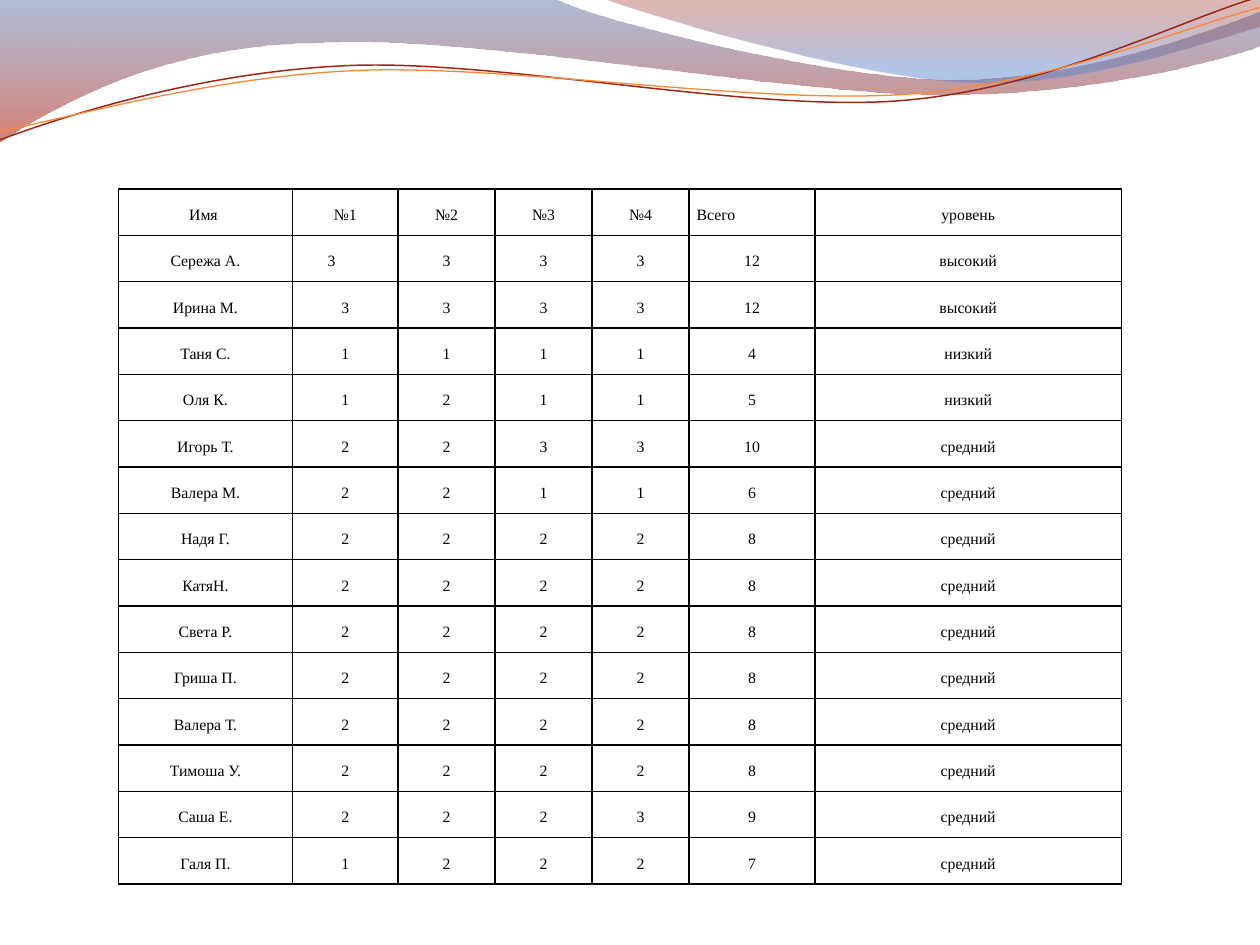
import math
from dataclasses import dataclass

from lxml import etree
from pptx import Presentation
from pptx import util as u
from pptx.dml import color
from pptx.enum import text
from pptx.oxml import ns


@dataclass(frozen=True)
class Theme:
    """Colours, type sizes and line widths of the slide."""
    font: str = "Times New Roman"
    size: float = 9
    ink: str = "000000"
    border: float = 1
    slate: str = "4F6EA8"
    red: str = "B61A00"
    brick: str = "951500"
    sky: str = "5681D1"
    rust: str = "9E2713"
    orange: str = "FE8637"


THEME = Theme()
BLANK_LAYOUT = 6
TILT = 357.3
TABLE_LEFT, TABLE_TOP, TABLE_HEIGHT = 0.94, 1.5, 5.52
COLUMNS = [1.38, 0.84, 0.77, 0.77, 0.77, 1, 2.43]
SIDE_MARGIN = 0.06
SCORE_INDENT = 0.22
HEADERS = ["Имя ", "№1", "№2", "№3", "№4", "Всего", "уровень"]
CHILDREN = [
    ("Сережа А.", (3, 3, 3, 3), "высокий"),
    ("Ирина М.", (3, 3, 3, 3), "высокий"),
    ("Таня С.", (1, 1, 1, 1), "низкий"),
    ("Оля К.", (1, 2, 1, 1), "низкий"),
    ("Игорь Т.", (2, 2, 3, 3), "средний"),
    ("Валера М.", (2, 2, 1, 1), "средний"),
    ("Надя Г.", (2, 2, 2, 2), "средний"),
    ("КатяН.", (2, 2, 2, 2), "средний"),
    ("Света Р.", (2, 2, 2, 2), "средний"),
    ("Гриша П.", (2, 2, 2, 2), "средний"),
    ("Валера Т.", (2, 2, 2, 2), "средний"),
    ("Тимоша У.", (2, 2, 2, 2), "средний"),
    ("Саша Е.", (2, 2, 2, 3), "средний"),
    ("Галя П.", (1, 2, 2, 2), "средний"),
]
LEFT_INDENTS = {(0, 5): 0, (1, 1): SCORE_INDENT}

WIDE_BAND = [
    [(0, -0.01)], [(4.4, -0.01)],
    [(4.76, 0.17), (6.64, 0.63), (7.58, 0.63)],
    [(8.53, 0.63), (9.58, 0.26), (10, 0.09)], [(10.01, 0.36)],
    [(9.83, 0.44), (8.7, 0.76), (7.46, 0.75)],
    [(6.22, 0.75), (3.82, 0.28), (2.57, 0.34)],
    [(1.29, 0.35), (0.46, 0.83), (-0.01, 1.13)],
]
RIGHT_BAND = [
    [(4.79, -0.01)],
    [(5.09, 0.11), (6.82, 0.62), (7.69, 0.65)],
    [(8.56, 0.69), (9.61, 0.32), (10, 0.21)], [(10, 0)],
]
RUST_CURVE = [
    [(0, 1.11)],
    [(0.48, 0.93), (1.58, 0.57), (2.77, 0.52)],
    [(3.95, 0.47), (5.93, 0.89), (7.13, 0.8)],
    [(8.33, 0.71), (9.38, 0.15), (9.98, -0.02)],
]
ORANGE_CURVE = [
    [(0, 1.04)],
    [(0.47, 0.96), (1.64, 0.61), (2.83, 0.56)],
    [(4.03, 0.51), (5.97, 0.83), (7.17, 0.75)],
    [(8.36, 0.67), (9.41, 0.21), (10, 0.06)],
]


def rgb(value):
    """Return the colour object for a hex value."""
    return color.RGBColor.from_string(value)


def level_out(outline, centre):
    """Turn an outline about its centre so that the tilt brings it back."""
    angle = math.radians(-TILT)
    cos, sin = math.cos(angle), math.sin(angle)
    cx, cy = centre
    return [[(cx + (x - cx) * cos - (y - cy) * sin, cy + (x - cx) * sin + (y - cy) * cos)
             for x, y in segment] for segment in outline]


def bend(shape, outline):
    """Join each three-point segment of a freeform into one cubic curve."""
    steps = iter(list(shape._element.iter(ns.qn("a:lnTo"))))
    for segment in outline[1:]:
        lines = [next(steps) for _ in segment]
        if len(lines) == 3:
            curve = etree.Element(ns.qn("a:cubicBezTo"))
            lines[0].addprevious(curve)
            for line in lines:
                curve.append(line[0])
                line.getparent().remove(line)


def add_outline(page, outline, closed):
    """Draw an outline of one-point lines and three-point curves, in inches."""
    points = [(u.Inches(x), u.Inches(y)) for segment in outline for x, y in segment]
    builder = page.shapes.build_freeform(*points[0])
    builder.add_line_segments(points[1:], close=closed)
    shape = builder.convert_to_shape()
    shape.shadow.inherit = False
    bend(shape, outline)
    return shape


def add_band(page, outline, stops):
    """Add a closed band with a translucent top-to-bottom gradient."""
    band = add_outline(page, outline, closed=True)
    band.line.fill.background()
    band.fill.gradient()
    band.fill.gradient_angle = 270
    for stop, (position, value, _) in zip(band.fill.gradient_stops, stops):
        stop.position = position
        stop.color.rgb = rgb(value)
    tints = band._element.spPr.iter(ns.qn("a:srgbClr"))
    for tint, (_, _, opacity) in zip(list(tints), stops):
        etree.SubElement(tint, ns.qn("a:alpha"), val=str(opacity * 1000))


def add_curve(page, outline, centre, value, width):
    """Add a tilted open curve with a plain line."""
    curve = add_outline(page, level_out(outline, centre), closed=False)
    curve.rotation = TILT
    curve.fill.background()
    curve.line.color.rgb = rgb(value)
    curve.line.width = u.Pt(width)


def add_borders(cell):
    """Draw a line on all four sides of a cell."""
    properties = cell._tc.get_or_add_tcPr()
    for side in ("lnL", "lnR", "lnT", "lnB"):
        line = etree.SubElement(properties, ns.qn(f"a:{side}"), w=str(u.Pt(THEME.border)))
        fill = etree.SubElement(line, ns.qn("a:solidFill"))
        etree.SubElement(fill, ns.qn("a:srgbClr"), val=THEME.ink)


def write_text(cell, words, align=text.PP_ALIGN.CENTER, spacing=2, after=6):
    """Write one formatted paragraph into a cell."""
    para = cell.text_frame.paragraphs[0]
    para.alignment = align
    para.line_spacing = spacing
    para.space_after = u.Pt(after)
    span = para.add_run()
    span.text = words
    span.font.name = THEME.font
    span.font.size = u.Pt(THEME.size)
    span.font.color.rgb = rgb(THEME.ink)


def format_cell(cell, words, indent=None):
    """Fill a cell, centred unless a left indent is given."""
    cell.margin_left = u.Inches(SIDE_MARGIN + (indent or 0))
    cell.margin_right = u.Inches(SIDE_MARGIN)
    cell.margin_top = cell.margin_bottom = 0
    add_borders(cell)
    cell.fill.background()
    centred = indent is None
    write_text(cell, words, align=text.PP_ALIGN.CENTER if centred else text.PP_ALIGN.LEFT)


def add_scores(page):
    """Add the table of scores, totals and levels."""
    rows = [HEADERS] + [[name, *marks, sum(marks), level] for name, marks, level in CHILDREN]
    frame = page.shapes.add_table(
        len(rows), len(COLUMNS), u.Inches(TABLE_LEFT), u.Inches(TABLE_TOP),
        u.Inches(sum(COLUMNS)), u.Inches(TABLE_HEIGHT))
    table = frame.table
    table.first_row = table.horz_banding = False
    for column, width in zip(table.columns, COLUMNS):
        column.width = u.Inches(width)
    for r, row in enumerate(rows):
        table.rows[r].height = u.Inches(TABLE_HEIGHT / len(rows))
        for c, value in enumerate(row):
            format_cell(table.cell(r, c), str(value), LEFT_INDENTS.get((r, c)))


def main():
    """Build the slide and save the deck."""
    deck = Presentation()
    deck.slide_width, deck.slide_height = u.Inches(10), u.Inches(7.5)
    page = deck.slides.add_slide(deck.slide_layouts[BLANK_LAYOUT])
    add_band(page, WIDE_BAND, [(0, THEME.slate, 45), (1, THEME.red, 55)])
    add_band(page, RIGHT_BAND, [(0, THEME.brick, 30), (0.8, THEME.sky, 45)])
    add_curve(page, RUST_CURVE, (4.99, 0.57), THEME.rust, 0.85)
    add_curve(page, ORANGE_CURVE, (5, 0.59), THEME.orange, 0.75)
    add_scores(page)
    deck.save("out.pptx")


if __name__ == "__main__":
    main()
